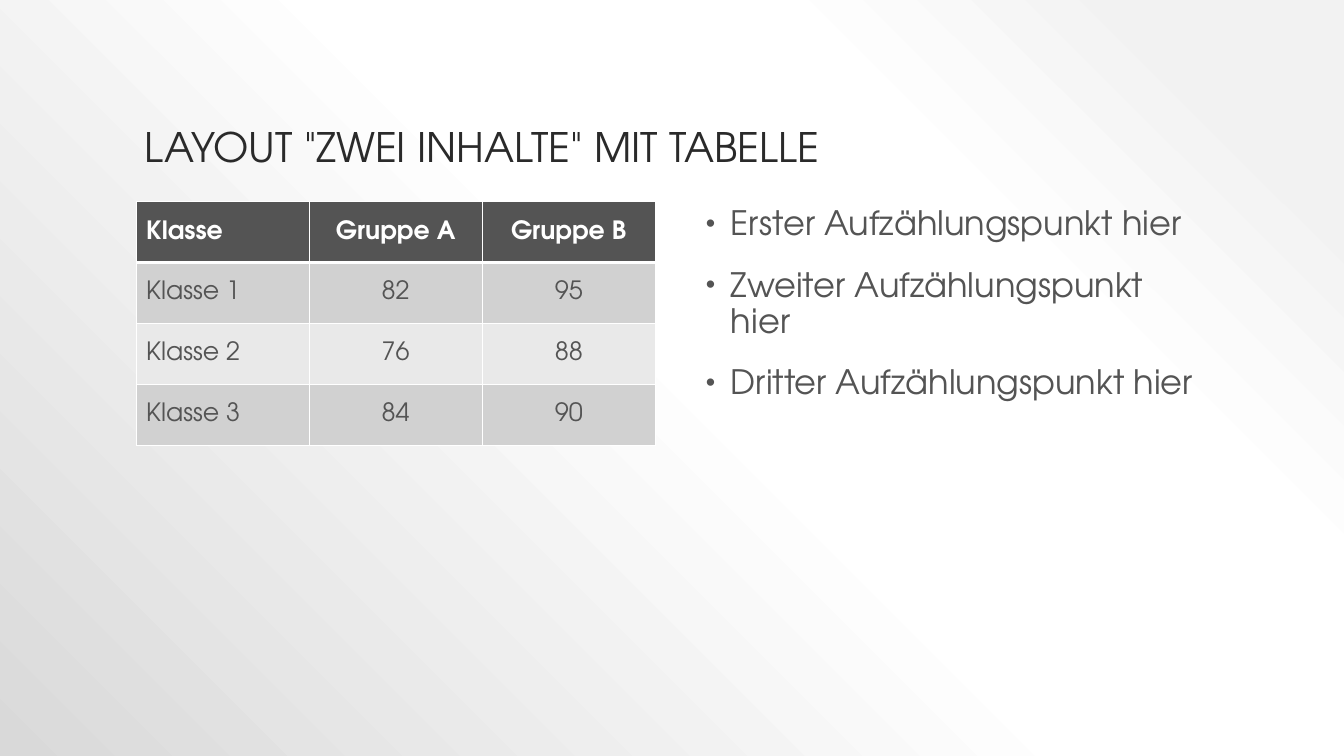
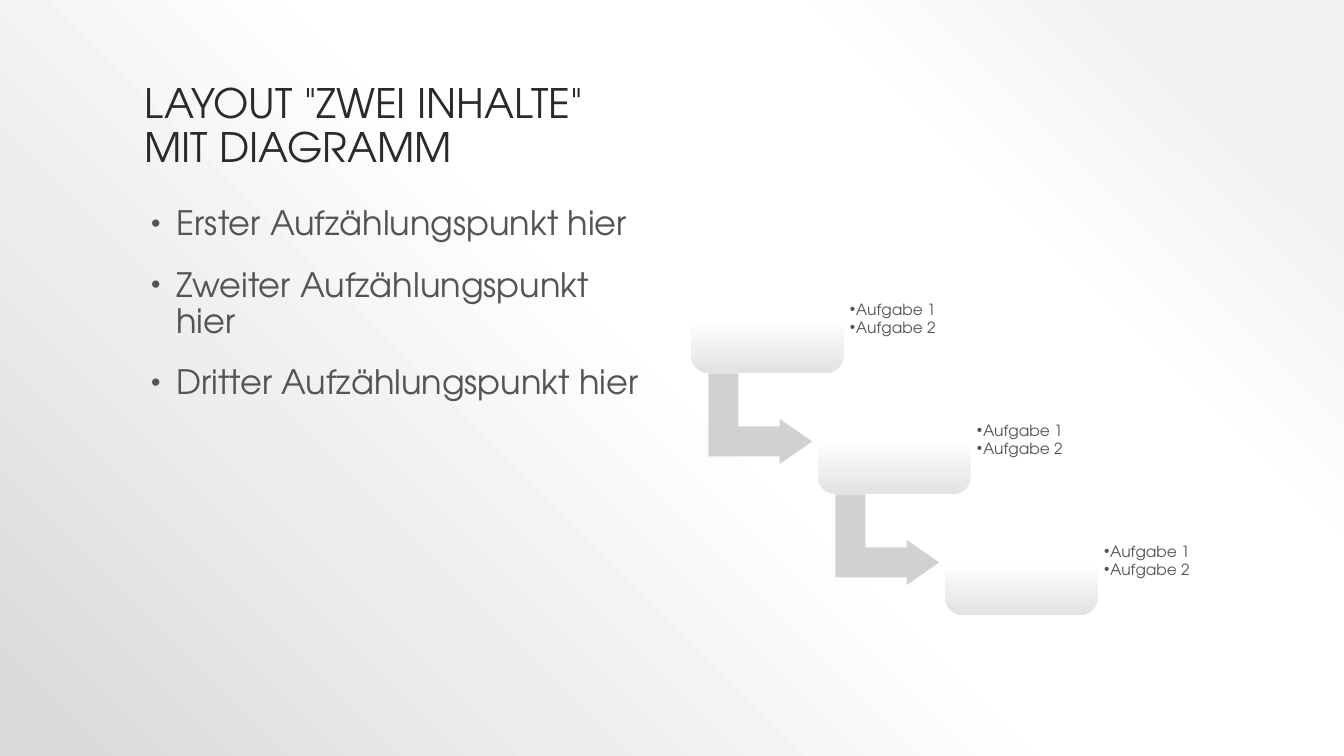
"""Build two two-column slides: a table with bullets, and bullets with a step diagram."""

from copy import deepcopy
from dataclasses import dataclass

from pptx import Presentation
from pptx.dml.color import RGBColor
from pptx.enum.shapes import MSO_SHAPE
from pptx.enum.text import MSO_ANCHOR, MSO_AUTO_SIZE, PP_ALIGN
from pptx.oxml import parse_xml
from pptx.oxml.ns import nsdecls, qn
from pptx.util import Inches, Pt

LEFT, CENTER = PP_ALIGN.LEFT, PP_ALIGN.CENTER
TOP, MIDDLE, BOTTOM = MSO_ANCHOR.TOP, MSO_ANCHOR.MIDDLE, MSO_ANCHOR.BOTTOM
NO_AUTOFIT = MSO_AUTO_SIZE.NONE
ROUNDED, BENT_ARROW = MSO_SHAPE.ROUNDED_RECTANGLE, MSO_SHAPE.BENT_UP_ARROW


@dataclass(frozen=True)
class Theme:
    """Colours, font and type sizes of the deck."""

    font: str = "TeX Gyre Adventor"
    title: str = "2A2A2A"
    text: str = "545454"
    white: str = "FFFFFF"
    band_dark: str = "D1D1D1"
    band_light: str = "E9E9E9"
    title_size: int = 29
    body_size: int = 24
    table_size: int = 18
    task_size: int = 11
    backdrop: tuple = ((10, "F2F2F2"), (28, "FFFFFF"), (48, "FFFFFF"), (100, "D9D9D9"))
    step_fill: tuple = ((0, "FFFFFF"), (50, "FFFFFF"), (100, "E3E3E3"))


@dataclass(frozen=True)
class Area:
    """A rectangle in inches."""

    left: float
    top: float
    width: float
    height: float

    def emu(self) -> tuple:
        """Return the rectangle as lengths for python-pptx."""
        return tuple(Inches(n) for n in (self.left, self.top, self.width, self.height))

    def moved(self, across: float, down: float) -> "Area":
        """Return the rectangle shifted by the given distances."""
        return Area(self.left + across, self.top + down, self.width, self.height)


@dataclass(frozen=True)
class Bullet:
    """Indents and relative size of a bullet."""

    margin: float
    hanging: float
    percent: int = 100


THEME = Theme()
SLIDE_WIDTH, SLIDE_HEIGHT = 13.33, 7.5
TITLE_AREA = Area(1.33, 0.3, 10.67, 1.45)
LEFT_COLUMN = Area(1.35, 2, 5.15, 4.75)
RIGHT_COLUMN = LEFT_COLUMN.moved(5.5, 0)
TABLE_HEIGHT = 2.42
BODY_BULLET, TASK_BULLET = Bullet(0.3, 0.25, 80), Bullet(0.06, 0.06)

STEP_COUNT = 3
STEP_ACROSS, STEP_DOWN = 1.26, 1.2
STEP_BOX = Area(6.85, 2.64, 1.52, 1.06)
STEP_ARROW = Area(7.09, 3.64, 0.9, 1.03)
STEP_TASKS = Area(8.37, 2.74, 1.11, 0.86)

POINTS = tuple(f"{word} Aufzählungspunkt hier" for word in ("Erster", "Zweiter", "Dritter"))
TASKS = ("Aufgabe 1", "Aufgabe 2")
RESULTS = (
    ("Klasse", "Gruppe A", "Gruppe B"),
    ("Klasse 1", "82", "95"),
    ("Klasse 2", "76", "88"),
    ("Klasse 3", "84", "90"),
)


def set_gradient(fill, element, stops: tuple, direction: str) -> None:
    """Replace the fill of an element by a gradient with the given stops."""
    fill.gradient()
    old = element.find(".//" + qn("a:gradFill"))
    marks = "".join(
        f'<a:gs pos="{share * 1000}"><a:srgbClr val="{color}"/></a:gs>' for share, color in stops
    )
    new = parse_xml(
        f'<a:gradFill {nsdecls("a")} rotWithShape="1"><a:gsLst>{marks}</a:gsLst>{direction}</a:gradFill>'
    )
    old.getparent().replace(old, new)


def add_bullet(para, bullet: Bullet, color: str) -> None:
    """Give a paragraph a hanging bullet."""
    props = para._p.get_or_add_pPr()
    props.set("marL", str(Inches(bullet.margin)))
    props.set("indent", str(-Inches(bullet.hanging)))
    for tag in (
        f'<a:buClr {nsdecls("a")}><a:srgbClr val="{color}"/></a:buClr>',
        f'<a:buSzPct {nsdecls("a")} val="{bullet.percent * 1000}"/>',
        f'<a:buFont {nsdecls("a")} typeface="Arial"/>',
        f'<a:buChar {nsdecls("a")} char="•"/>',
    ):
        props.append(parse_xml(tag))


def write(
    frame,
    lines: tuple,
    *,
    size: int,
    color: str = THEME.text,
    bold: bool = False,
    align: PP_ALIGN = LEFT,
    spacing: float = 0.9,
    before: float = 0,
    after: float = 0,
    bullet: Bullet | None = None,
) -> None:
    """Write one paragraph per line with the given format."""
    for index, line in enumerate(lines):
        para = frame.add_paragraph() if index else frame.paragraphs[0]
        para.text = line
        if bullet:
            add_bullet(para, bullet, color)
        para.alignment = align
        para.line_spacing = spacing
        para.space_before = Pt(before if index else 0)
        para.space_after = Pt(after)
        for span in para.runs:
            span.font.name = THEME.font
            span.font.size = Pt(size)
            span.font.bold = bold
            span.font.color.rgb = RGBColor.from_string(color)
        for line_break in para._p.findall(qn("a:br")):
            line_break.insert(0, deepcopy(para.runs[0]._r.rPr))


def place(holder, area: Area, anchor: MSO_ANCHOR) -> None:
    """Move a placeholder and fix its text behaviour."""
    holder.left, holder.top, holder.width, holder.height = area.emu()
    frame = holder.text_frame
    frame.word_wrap = True
    frame.auto_size = NO_AUTOFIT
    frame.vertical_anchor = anchor


def add_page(deck, title: str, list_area: Area):
    """Add a slide with its title and bullet list."""
    page = deck.slides.add_slide(deck.slide_layouts[1])
    heading, body = page.shapes.title, page.placeholders[1]
    place(heading, TITLE_AREA, BOTTOM)
    write(heading.text_frame, (title,), size=THEME.title_size, color=THEME.title)
    place(body, list_area, TOP)
    write(body.text_frame, POINTS, size=THEME.body_size, before=18, bullet=BODY_BULLET)
    return page


def set_borders(cell, top: float, bottom: float) -> None:
    """Draw white borders around a cell, with widths in points."""
    props = cell._tc.get_or_add_tcPr()
    widths = {"lnL": 1, "lnR": 1, "lnT": top, "lnB": bottom}
    for index, (side, width) in enumerate(widths.items()):
        line = (
            f'<a:{side} {nsdecls("a")} w="{Pt(width)}"><a:solidFill>'
            f'<a:srgbClr val="{THEME.white}"/></a:solidFill></a:{side}>'
        )
        props.insert(index, parse_xml(line))


def add_results(page, area: Area) -> None:
    """Add the table of results with a header row and banded rows."""
    row_count, column_count = len(RESULTS), len(RESULTS[0])
    table = page.shapes.add_table(row_count, column_count, *area.emu()).table
    for row_index, row in enumerate(RESULTS):
        header = row_index == 0
        band = THEME.band_dark if row_index % 2 else THEME.band_light
        for column_index, text in enumerate(row):
            cell = table.cell(row_index, column_index)
            cell.vertical_anchor = MIDDLE
            cell.fill.solid()
            cell.fill.fore_color.rgb = RGBColor.from_string(THEME.text if header else band)
            set_borders(cell, top=3 if row_index == 1 else 1, bottom=3 if header else 1)
            write(
                cell.text_frame,
                (text,),
                size=THEME.table_size,
                color=THEME.white if header else THEME.text,
                bold=header,
                align=CENTER if column_index else LEFT,
                spacing=1,
            )


def add_plain_shape(group, kind: MSO_SHAPE, area: Area, adjustments: tuple):
    """Add a preset shape without line or shadow."""
    shape = group.shapes.add_shape(kind, *area.emu())
    shape.shadow.inherit = False
    shape.line.fill.background()
    for index, value in enumerate(adjustments):
        shape.adjustments[index] = value
    return shape


def add_step(group, index: int) -> None:
    """Add one step: arrow to the next step, box and tasks."""
    shift = (index * STEP_ACROSS, index * STEP_DOWN)
    if index < STEP_COUNT - 1:
        arrow = add_plain_shape(group, BENT_ARROW, STEP_ARROW.moved(*shift), (0.33, 0.25, 0.36))
        arrow.rotation = 90
        arrow.fill.solid()
        arrow.fill.fore_color.rgb = RGBColor.from_string(THEME.band_dark)
    box = add_plain_shape(group, ROUNDED, STEP_BOX.moved(*shift), (0.17,))
    set_gradient(box.fill, box.element, THEME.step_fill, '<a:lin ang="5400000" scaled="0"/>')
    frame = group.shapes.add_textbox(*STEP_TASKS.moved(*shift).emu()).text_frame
    frame.word_wrap = True
    frame.vertical_anchor = MIDDLE
    frame.margin_left = frame.margin_right = frame.margin_top = frame.margin_bottom = Inches(0.06)
    write(frame, TASKS, size=THEME.task_size, after=1, bullet=TASK_BULLET)


def main() -> None:
    """Build and save the deck."""
    deck = Presentation()
    deck.slide_width, deck.slide_height = Inches(SLIDE_WIDTH), Inches(SLIDE_HEIGHT)
    master = deck.slide_master
    corner = '<a:path path="circle"><a:fillToRect l="100000" b="100000"/></a:path>'
    set_gradient(master.background.fill, master.element, THEME.backdrop, corner)

    table_page = add_page(deck, 'LAYOUT "ZWEI INHALTE" MIT TABELLE', RIGHT_COLUMN)
    table_area = Area(LEFT_COLUMN.left, LEFT_COLUMN.top, LEFT_COLUMN.width, TABLE_HEIGHT)
    add_results(table_page, table_area)

    diagram_page = add_page(deck, 'LAYOUT "ZWEI INHALTE" \nMIT DIAGRAMM', LEFT_COLUMN)
    group = diagram_page.shapes.add_group_shape()
    for index in range(STEP_COUNT):
        add_step(group, index)
    deck.save("out.pptx")


if __name__ == "__main__":
    main()
